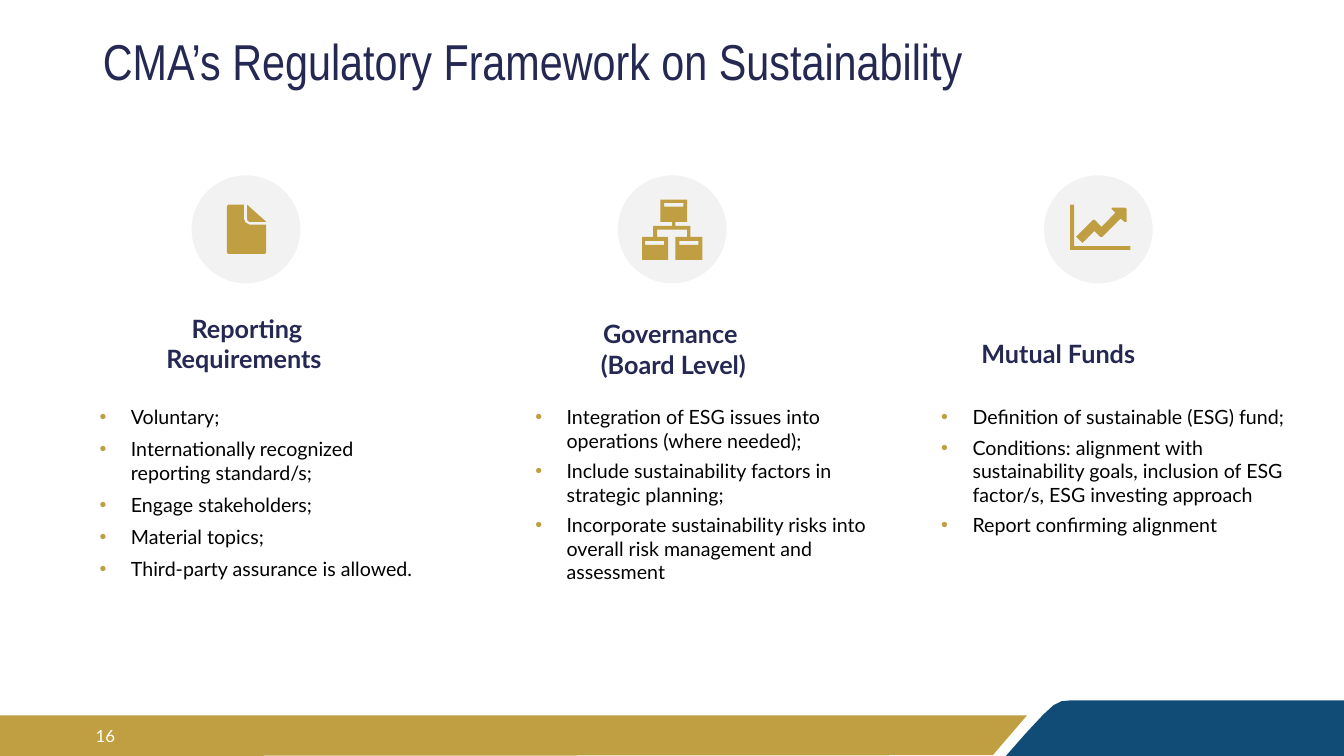
from dataclasses import dataclass

import lxml.etree
import pptx
import pptx.dml.color
import pptx.enum.shapes
import pptx.enum.text
import pptx.oxml.ns
import pptx.util

Cm = pptx.util.Cm
Align = pptx.enum.text.PP_ALIGN
Anchor = pptx.enum.text.MSO_ANCHOR
Points = list[tuple[int, int]]


@dataclass(frozen=True)
class Theme:
    navy: str = "242852"
    gold: str = "BF9F42"
    blue: str = "114C76"
    grey: str = "F2F2F2"
    black: str = "000000"
    white: str = "FFFFFF"
    narrow: str = "Arial Narrow"
    plain: str = "Lato"
    title: int = 36
    head: int = 18
    body: int = 14
    small: int = 12


@dataclass(frozen=True)
class Box:
    left: float
    top: float
    width: float
    height: float


@dataclass(frozen=True)
class Column:
    head: str
    head_box: Box
    items: list[str]
    list_box: Box
    gap: int
    icon: list[Points]


THEME = Theme()
DISC = Box(4.83, 4.42, 2.74, 2.72)
PITCH = 10.74
INDENT = 0.79


def block(left: int, top: int, right: int, bottom: int) -> Points:
    return [(left, top), (left, bottom), (right, bottom), (right, top)]


# Icon outlines, in hundredths of a centimetre from the disc corner
PAGE = [
    [(92, 74), (132, 74), (132, 109), (135, 118), (145, 124), (188, 124),
     (188, 193), (185, 198), (92, 198), (89, 194), (89, 78)],
    [(140, 74), (188, 117), (145, 117), (141, 114), (140, 109)],
]
TREE = [
    [(183, 155), (183, 127), (145, 127), (145, 117), (175, 117), (175, 61),
     (107, 61), (107, 117), (137, 117), (137, 127), (89, 127), (89, 155),
     (61, 155), (61, 213), (127, 213), (127, 155), (99, 155), (99, 137),
     (175, 137), (175, 155), (145, 155), (145, 213), (213, 213), (213, 155)],
    block(69, 165, 117, 175),
    block(117, 69, 165, 79),
    block(155, 165, 203, 175),
]
TREND = [
    [(66, 74), (76, 74), (76, 178), (218, 178), (218, 188), (66, 188)],
    [(208, 117), (203, 117), (193, 109), (147, 155), (142, 155), (127, 140),
     (97, 170), (81, 155), (124, 112), (128, 112), (145, 130), (180, 94),
     (170, 84), (173, 81), (203, 81), (208, 84)],
]

# Footer outlines, in hundredths of a centimetre from the slide corner
TAB = [(2697, 1765), (3387, 1765), (3387, 1905), (2535, 1905), (2586, 1847),
       (2629, 1801), (2655, 1777), (2675, 1767)]
BAND = [(0, 1803), (2588, 1803), (2502, 1903), (0, 1905)]

COLUMNS = [
    Column("Reporting Requirements ", Box(2.87, 7.9, 6.71, 1.55),
           ["Voluntary;",
            "Internationally recognized reporting standard/s;",
            "Engage stakeholders;",
            "Material topics;",
            "Third-party assurance is allowed."],
           Box(2.51, 10.21, 8.18, 5.36), 6, PAGE),
    Column("Governance \n(Board Level)", Box(13.49, 8.03, 6.96, 1.3),
           ["Integration of ESG issues into operations (where needed);",
            "Include sustainability factors in strategic planning;",
            "Incorporate sustainability risks into overall risk management "
            "and assessment"],
           Box(13.49, 10.21, 8.71, 5.36), 5, TREE),
    Column("Mutual Funds", Box(24.03, 8.53, 5.28, 1.3),
           ["Definition of sustainable (ESG) fund;",
            "Conditions: alignment with sustainability goals, inclusion of ESG "
            "factor/s, ESG investing approach",
            "Report confirming alignment"],
           Box(23.72, 10.21, 8.71, 5.36), 5, TREND),
]


def place(shape, box: Box) -> None:
    shape.left, shape.top = Cm(box.left), Cm(box.top)
    shape.width, shape.height = Cm(box.width), Cm(box.height)


def paint(shape, color: str) -> None:
    shape.fill.solid()
    shape.fill.fore_color.rgb = pptx.dml.color.RGBColor.from_string(color)
    shape.line.fill.background()
    shape.shadow.inherit = False


def draw(shapes, paths: list[Points], color: str,
         left: float = 0, top: float = 0) -> None:
    first, *rest = paths
    pen = shapes.build_freeform(*first[0], scale=Cm(0.01))
    pen.add_line_segments(first[1:], close=True)
    for path in rest:
        pen.move_to(*path[0])
        pen.add_line_segments(path[1:], close=True)
    paint(pen.convert_to_shape(Cm(left), Cm(top)), color)


def style(frame, font: str, size: int, color: str, align: Align,
          bold: bool = False) -> None:
    for para in frame.paragraphs:
        para.alignment = align
        for run in para.runs:
            run.font.name = font
            run.font.size = pptx.util.Pt(size)
            run.font.bold = bold
            run.font.color.rgb = pptx.dml.color.RGBColor.from_string(color)


def write(shapes, text: str, box: Box):
    shape = shapes.add_textbox(0, 0, 0, 0)
    place(shape, box)
    frame = shape.text_frame
    frame.word_wrap = True
    frame.margin_left = frame.margin_right = Cm(0)
    frame.margin_top = frame.margin_bottom = Cm(0)
    frame.text = text
    return frame


def bullet(para, color: str) -> None:
    props = para._p.get_or_add_pPr()
    props.set("marL", str(Cm(INDENT)))
    props.set("indent", str(-Cm(INDENT)))
    name = pptx.oxml.ns.qn
    tint = lxml.etree.SubElement(props, name("a:buClr"))
    lxml.etree.SubElement(tint, name("a:srgbClr"), val=color)
    lxml.etree.SubElement(props, name("a:buFont"), typeface="Arial")
    lxml.etree.SubElement(props, name("a:buChar"), char="•")


def add_column(shapes, col: Column, left: float) -> None:
    # Disc and icon
    disc = shapes.add_shape(pptx.enum.shapes.MSO_SHAPE.OVAL, 0, 0, 0, 0)
    place(disc, Box(left, DISC.top, DISC.width, DISC.height))
    paint(disc, THEME.grey)
    draw(shapes, col.icon, THEME.gold, left, DISC.top)
    # Heading
    head = write(shapes, col.head, col.head_box)
    style(head, THEME.plain, THEME.head, THEME.navy, Align.CENTER, True)
    # Bulleted list
    body = write(shapes, "\n".join(col.items), col.list_box)
    for para in body.paragraphs:
        para.space_after = pptx.util.Pt(col.gap)
        bullet(para, THEME.gold)
    style(body, THEME.plain, THEME.body, THEME.black, Align.LEFT)


def main() -> None:
    deck = pptx.Presentation()
    deck.slide_width, deck.slide_height = Cm(33.87), Cm(19.05)
    slide = deck.slides.add_slide(deck.slide_layouts[5])
    shapes = slide.shapes

    # Footer and page number
    draw(shapes, [TAB], THEME.blue)
    draw(shapes, [BAND], THEME.gold)
    page = write(shapes, "16", Box(0, 18.03, 2.9, 1.02))
    page.vertical_anchor = Anchor.MIDDLE
    style(page, THEME.plain, THEME.small, THEME.white, Align.RIGHT)

    # Title
    place(shapes.title, Box(2.34, 0.61, 29.21, 2.03))
    title = shapes.title.text_frame
    title.text = "CMA’s Regulatory Framework on Sustainability"
    title.auto_size = pptx.enum.text.MSO_AUTO_SIZE.NONE
    title.vertical_anchor = Anchor.MIDDLE
    title.paragraphs[0].line_spacing = 0.9
    style(title, THEME.narrow, THEME.title, THEME.navy, Align.LEFT)

    # Columns
    for rank, col in enumerate(COLUMNS):
        add_column(shapes, col, DISC.left + rank * PITCH)

    deck.save("out.pptx")


if __name__ == "__main__":
    main()
